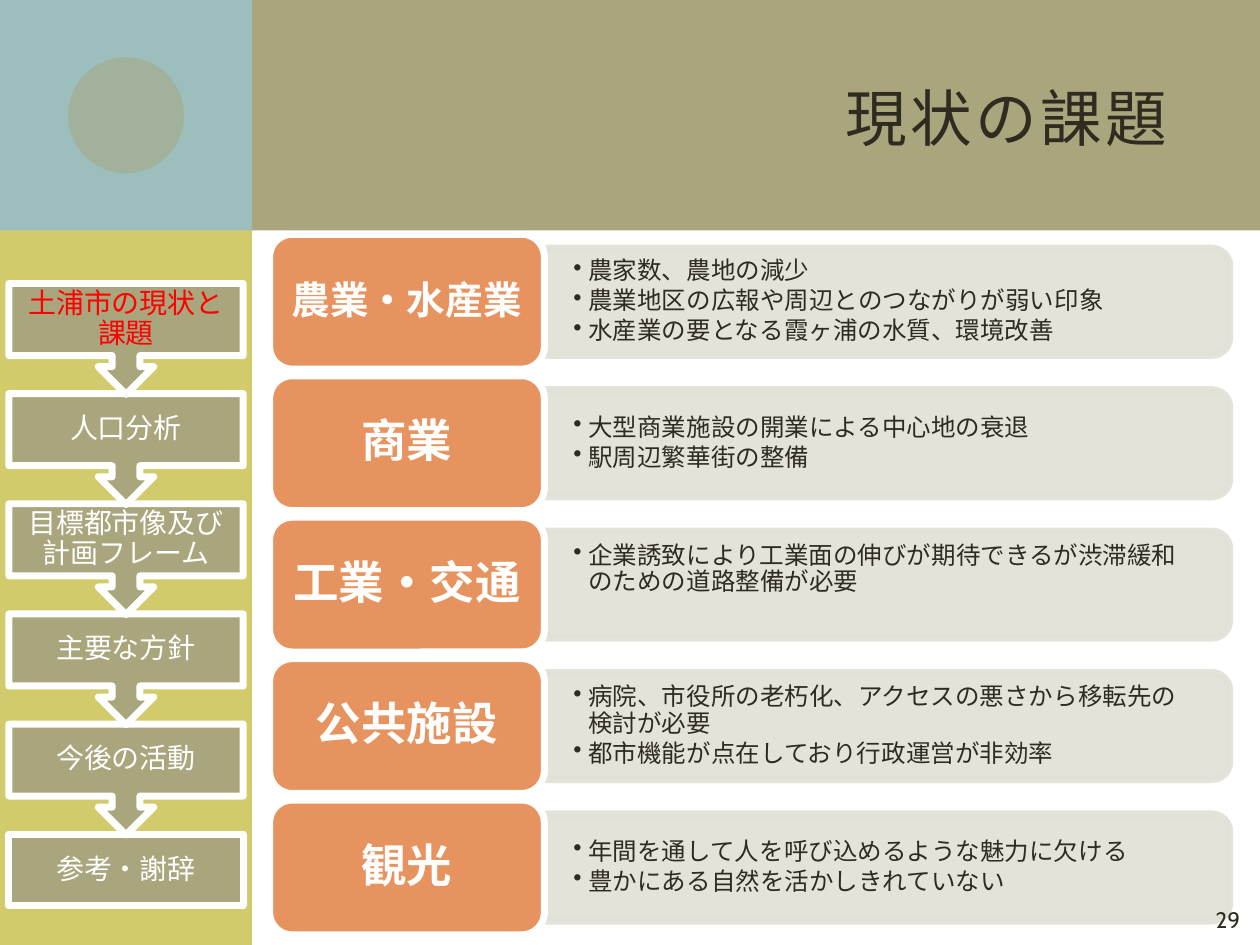
from lxml import etree
from pptx import Presentation
from pptx.dml.color import RGBColor
from pptx.enum.shapes import MSO_SHAPE
from pptx.enum.text import MSO_ANCHOR, MSO_AUTO_SIZE, PP_ALIGN
from pptx.oxml.ns import qn
from pptx.util import Inches, Pt

RECT, OVAL = MSO_SHAPE.RECTANGLE, MSO_SHAPE.OVAL
ROUND, TAB = MSO_SHAPE.ROUNDED_RECTANGLE, MSO_SHAPE.ROUND_2_SAME_RECTANGLE
CALLOUT = MSO_SHAPE.UP_ARROW_CALLOUT
LEFT, MID, RIGHT = PP_ALIGN.LEFT, PP_ALIGN.CENTER, PP_ALIGN.RIGHT
CENTER, NO_FIT = MSO_ANCHOR.MIDDLE, MSO_AUTO_SIZE.NONE

OLIVE = RGBColor(0xA9, 0xA5, 0x7C)
LIME = RGBColor(0xD2, 0xCB, 0x6C)
TEAL = RGBColor(0x9C, 0xBE, 0xBD)
STONE = RGBColor(0xE2, 0xE1, 0xD7)
ORANGE = RGBColor(0xE7, 0x93, 0x5F)
INK = RGBColor(0x2F, 0x2B, 0x20)
WHITE = RGBColor(0xFF, 0xFF, 0xFF)
RED = RGBColor(0xFF, 0x00, 0x00)

WIDTH, HEIGHT = Inches(10), Inches(7.5)
COL, ROW = WIDTH / 10, HEIGHT / 7.5

STEPS = ["土浦市の現状と課題", "人口分析", "目標都市像及び計画フレーム",
         "主要な方針", "今後の活動", "参考・謝辞"]
CARDS = [
    ("農業・水産業", 22, 0.14, ["農家数、農地の減少",
                         "農業地区の広報や周辺とのつながりが弱い印象",
                         "水産業の要となる霞ヶ浦の水質、環境改善"]),
    ("商業", 26, 0.14, ["大型商業施設の開業による中心地の衰退",
                      "駅周辺繁華街の整備"]),
    ("工業・交通", 26, 0.38, ["企業誘致により工業面の伸びが期待できるが渋滞緩和のための道路整備が必要"]),
    ("公共施設", 26, 0.14, ["病院、市役所の老朽化、アクセスの悪さから移転先の検討が必要",
                        "都市機能が点在しており行政運営が非効率"]),
    ("観光", 26, 0.14, ["年間を通して人を呼び込めるような魅力に欠ける",
                      "豊かにある自然を活かしきれていない"]),
]


def grid(x, y, w, h):
    """Turn columns and rows into slide lengths."""
    return [round(n) for n in (x * COL, y * ROW, w * COL, h * ROW)]


def fade(part, share):
    """Set the opacity of a fill or line element, in percent."""
    for tone in part.iter(qn("a:srgbClr")):
        etree.SubElement(tone, qn("a:alpha"), val=str(share * 1000))


def draw(slide, kind, box, fill, line=None, turn=0, share=100):
    """Add a flat preset shape."""
    shape = slide.shapes.add_shape(kind, *grid(*box))
    shape.shadow.inherit = False
    shape.rotation = turn
    shape.fill.solid()
    shape.fill.fore_color.rgb = fill
    if line is None:
        shape.line.fill.background()
    else:
        shape.line.color.rgb = line
        shape.line.width = Pt(4)
    if share < 100:
        fade(shape.element.spPr, share)
    return shape


def dot(para):
    """Give a paragraph a hanging round bullet."""
    props = para._p.get_or_add_pPr()
    props.set("marL", str(Inches(0.12)))
    props.set("indent", str(-Inches(0.12)))
    etree.SubElement(props, qn("a:buChar"), char="•")


def write(shape, *lines, size=16, font="Calibri", color=WHITE, bold=False,
          align=MID, pads=(0.1, 0.05, 0.1, 0.05), lead=0.9, after=0,
          dots=False, small=False, track=0):
    """Fill a shape with formatted paragraphs."""
    frame = shape.text_frame
    frame.word_wrap, frame.auto_size = True, NO_FIT
    frame.vertical_anchor = CENTER
    (frame.margin_left, frame.margin_top,
     frame.margin_right, frame.margin_bottom) = map(Inches, pads)
    for i, line in enumerate(lines):
        para = frame.add_paragraph() if i else frame.paragraphs[0]
        para.alignment, para.line_spacing = align, lead
        para.space_before, para.space_after = Pt(0), Pt(after)
        if dots:
            dot(para)
        run = para.add_run()
        run.text = line
        run.font.name, run.font.size = font, Pt(size)
        run.font.bold, run.font.color.rgb = bold, color
        props = run.font._element
        if small:
            props.set("cap", "small")
        if track:
            props.set("spc", str(track * 100))


def label(slide, box, *lines, **style):
    """Add a text box."""
    write(slide.shapes.add_textbox(*grid(*box)), *lines, **style)


def frame(slide, box):
    """Draw the coloured bands behind the slide."""
    x, y, w, h = box
    side, top, disc = 2, 1.83, 0.92
    draw(slide, RECT, (x + side, y, w - side, top), OLIVE)
    draw(slide, RECT, (x, y, side, h), LIME)
    draw(slide, RECT, (x, y, side, top), TEAL)
    draw(slide, OVAL, (x + (side - disc) / 2, y + (top - disc) / 2, disc, disc),
         OLIVE, share=50)


def head(slide, box):
    """Place the title above the bands."""
    title = slide.shapes.title
    title.element.getparent().append(title.element)
    title.left, title.top, title.width, title.height = grid(*box)
    write(title, "現状の課題", size=44, font="Cabin", color=INK, align=RIGHT,
          lead=1, small=True, track=2)


def steps(slide, box):
    """Stack the agenda steps, last one at the back."""
    x, y, w, h = box
    tall, last = 0.57, len(STEPS) - 1
    pitch = (h - tall) / last
    for i in reversed(range(len(STEPS))):
        top = y + i * pitch
        kind, deep, turn = (RECT, tall, 0) if i == last else (CALLOUT, 0.88, 180)
        draw(slide, kind, (x, top, w, deep), OLIVE, WHITE, turn)
        label(slide, (x, top, w, tall), STEPS[i], pads=[0.12] * 4,
              color=WHITE if i else RED)


def card(slide, box, name, size, foot, items):
    """Place one topic label with its list panel."""
    x, y, w, h = box
    side, thick = 2.18, 0.85
    start = x + side - 0.04
    wide = x + w - start
    draw(slide, TAB, (start + (wide - thick) / 2, y + (h - wide) / 2, thick, wide),
         STONE, STONE, 90, 90)
    label(slide, (start, y + 0.15, wide - 0.04, h - 0.3), *items, size=14,
          color=INK, align=LEFT, pads=(0.27, 0.14, 0.27, foot), after=2, dots=True)
    tag = draw(slide, ROUND, (x, y, side, h), ORANGE, WHITE)
    write(tag, name, size=size, bold=True)


def cards(slide, box):
    """Spread the topic cards evenly down the box."""
    x, y, w, h = box
    tall = 1.07
    pitch = (h - tall) / (len(CARDS) - 1)
    for i, topic in enumerate(CARDS):
        card(slide, (x, y + i * pitch, w, tall), *topic)


def main():
    """Build and save the slide."""
    deck = Presentation()
    deck.slide_width, deck.slide_height = WIDTH, HEIGHT
    slide = deck.slides.add_slide(deck.slide_layouts[5])
    frame(slide, (0, 0, 10, 7.5))
    head(slide, (2.67, 0.25, 6.83, 1.25))
    cards(slide, (2.14, 1.86, 7.62, 5.56))
    steps(slide, (0.07, 2.25, 1.86, 4.94))
    label(slide, (9.33, 6.98, 0.83, 0.6), "29", font="Cabin", color=INK,
          lead=1, small=True)
    deck.save("out.pptx")


if __name__ == "__main__":
    main()
